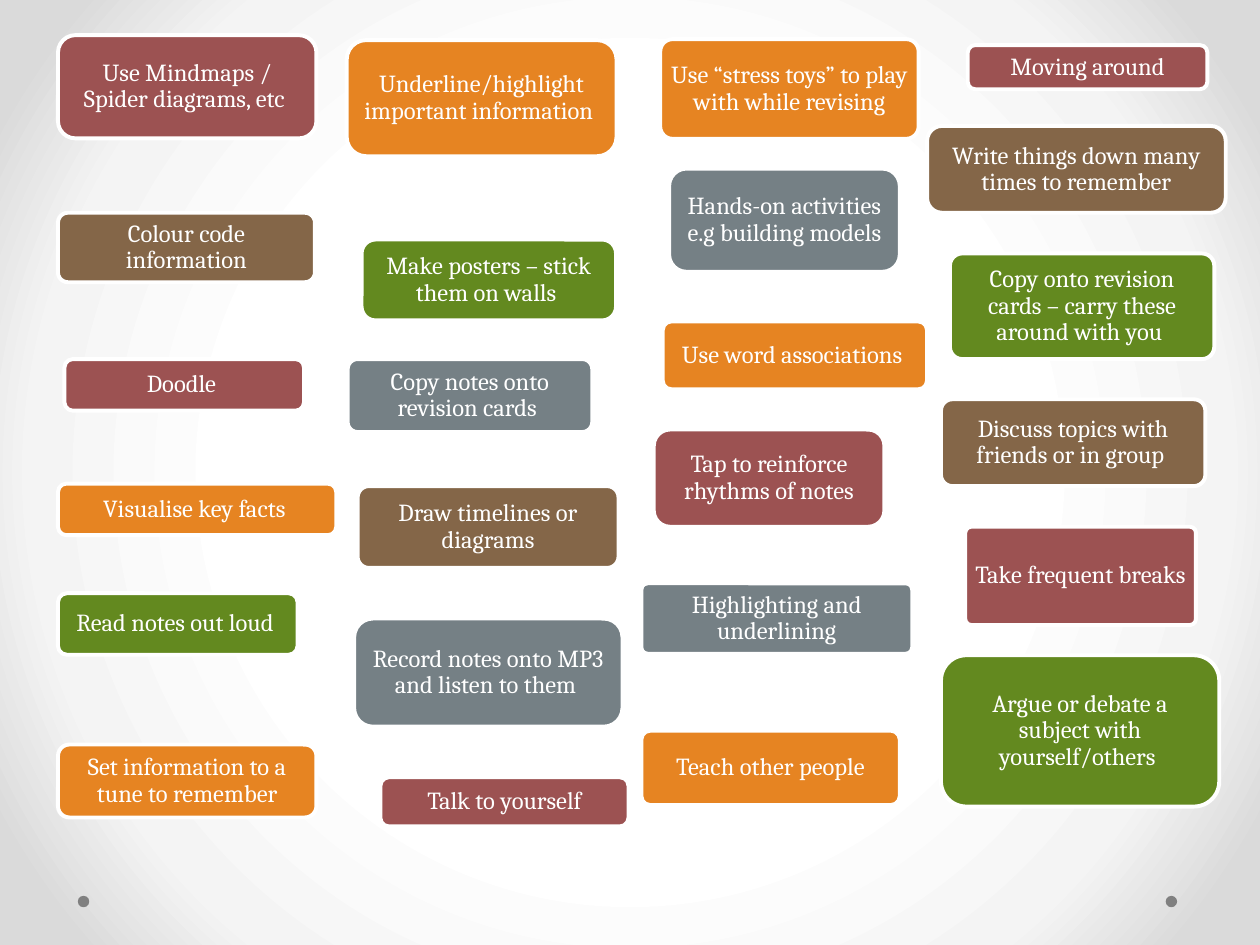
from dataclasses import dataclass

from lxml.etree import SubElement
from pptx import Presentation
from pptx.dml.color import RGBColor as Rgb
from pptx.enum.shapes import MSO_SHAPE as Shape
from pptx.enum.text import MSO_ANCHOR as Anchor, PP_ALIGN as Align
from pptx.oxml.ns import qn
from pptx.util import Cm, Pt


@dataclass(frozen=True)
class Theme:
    font: str = "Cambria"
    text_size: float = 14
    space_after: float = 4.9
    line_spacing: float = 0.9
    outline_width: float = 2.25
    white: str = "FFFFFF"
    dot: str = "808080"
    red: str = "9C5252"
    orange: str = "E68422"
    brown: str = "846648"
    green: str = "63891F"
    slate: str = "758085"
    backdrop: tuple = ((50, "FFFFFF"), (76, "F4F4F4"), (92, "DADADA"))


def apply_format(target, values):
    for name, value in values.items():
        setattr(target, name, value)


class TipSlide:
    """Holds the theme and the slide being filled."""

    def __init__(self, deck, theme):
        self.theme = theme
        self.page = deck.slides.add_slide(deck.slide_layouts[6])

    def radial_background(self):
        self.page.background.fill.gradient()
        gradient = next(self.page.element.iter(qn("a:gradFill")))
        for child in list(gradient):
            gradient.remove(child)
        stops = SubElement(gradient, qn("a:gsLst"))
        for percent, colour in self.theme.backdrop:
            stop = SubElement(stops, qn("a:gs"), pos=str(percent * 1000))
            SubElement(stop, qn("a:srgbClr"), val=colour)
        circle = SubElement(gradient, qn("a:path"), path="circle")
        centre = {side: "50000" for side in "ltrb"}
        SubElement(circle, qn("a:fillToRect"), centre)

    def dot(self, left, top, size):
        dot = self.page.shapes.add_shape(
            Shape.OVAL, Cm(left), Cm(top), Cm(size), Cm(size))
        dot.shadow.inherit = False
        dot.fill.solid()
        dot.fill.fore_color.rgb = Rgb.from_string(self.theme.dot)
        dot.line.fill.background()

    def tip(self, group, text, colour, left, top, width, height, radius):
        theme = self.theme
        box = group.shapes.add_shape(
            Shape.ROUNDED_RECTANGLE, Cm(left), Cm(top), Cm(width), Cm(height))
        box.adjustments[0] = radius / min(width, height)
        box.shadow.inherit = False
        box.fill.solid()
        box.fill.fore_color.rgb = Rgb.from_string(getattr(theme, colour))
        box.line.color.rgb = Rgb.from_string(theme.white)
        box.line.width = Pt(theme.outline_width)

        frame = box.text_frame
        apply_format(frame, {
            "word_wrap": True, "vertical_anchor": Anchor.MIDDLE,
            "margin_left": Cm(0.14), "margin_right": Cm(0.14),
            "margin_top": Cm(0.08), "margin_bottom": Cm(0.08)})
        para = frame.paragraphs[0]
        apply_format(para, {
            "alignment": Align.CENTER, "line_spacing": theme.line_spacing,
            "space_after": Pt(theme.space_after)})
        span = para.add_run()
        span.text = text
        apply_format(span.font, {
            "name": theme.font, "size": Pt(theme.text_size)})
        span.font.color.rgb = Rgb.from_string(theme.white)

    def tip_group(self, tips):
        group = self.page.shapes.add_group_shape()
        for tip in tips:
            self.tip(group, *tip)


# Text, colour, left, top, width, height, corner radius (cm)
LEFT_TIPS = [
    ("Use Mindmaps / Spider diagrams, etc ", "red", 1.17, 0.71, 5.21, 2.08, 0.35),
    ("Underline/highlight important information ", "orange", 6.99, 0.81, 5.44, 2.34, 0.39),
    ("Colour code information", "brown", 1.17, 4.29, 5.18, 1.4, 0.2),
    ("Make posters – stick them on walls ", "green", 7.29, 4.83, 5.13, 1.63, 0.28),
    ("Copy notes onto revision cards ", "slate", 7.01, 7.24, 4.93, 1.47, 0.2),
    ("Doodle ", "red", 1.3, 7.24, 4.83, 1.04, 0.17),
    ("Visualise key facts ", "orange", 1.17, 9.75, 5.61, 1.04, 0.17),
    ("Draw timelines or diagrams", "brown", 7.21, 9.8, 5.26, 1.65, 0.23),
    ("Read notes out loud ", "green", 1.17, 11.96, 4.83, 1.24, 0.18),
    ("Record notes onto MP3 and listen to them ", "slate", 7.14, 12.47, 5.41, 2.18, 0.38),
    ("Talk to yourself", "red", 7.67, 15.67, 5, 0.99, 0.17),
    ("Set information to a tune to remember", "orange", 1.17, 15.01, 5.21, 1.47, 0.23),
]
RIGHT_TIPS = [
    ("Moving around", "red", 19.51, 0.91, 4.83, 0.89, 0.15),
    ("Use “stress toys” to play with while revising", "orange", 13.31, 0.79, 5.21, 2.01, 0.25),
    ("Write things down many times to remember", "brown", 18.69, 2.54, 6.02, 1.75, 0.3),
    ("Copy onto revision cards – carry these around with you ", "green",
     19.15, 5.11, 5.33, 2.13, 0.25),
    ("Hands-on activities e.g building models", "slate", 13.49, 3.4, 4.65, 2.08, 0.35),
    ("Tap to reinforce rhythms of notes", "red", 13.18, 8.66, 4.65, 1.96, 0.33),
    ("Use word associations ", "orange", 13.36, 6.48, 5.33, 1.37, 0.18),
    ("Discuss topics with friends or in group ", "brown", 18.97, 8.05, 5.33, 1.75, 0.23),
    ("Argue or debate a subject with yourself/others ", "green",
     18.97, 13.21, 5.61, 3.05, 0.51),
    ("Highlighting and underlining", "slate", 12.93, 11.76, 5.46, 1.42, 0.13),
    ("Take frequent breaks", "red", 19.46, 10.62, 4.65, 1.98, 0.12),
    ("Teach other people", "orange", 12.93, 14.73, 5.21, 1.5, 0.18),
]


def main():
    deck = Presentation()
    apply_format(deck, {"slide_width": Cm(25.4), "slide_height": Cm(19.05)})
    slide = TipSlide(deck, Theme())
    slide.radial_background()
    for left in (23.5, 1.57):
        slide.dot(left, 18.06, 0.23)
    for tips in (LEFT_TIPS, RIGHT_TIPS):
        slide.tip_group(tips)
    deck.save("out.pptx")


if __name__ == "__main__":
    main()
